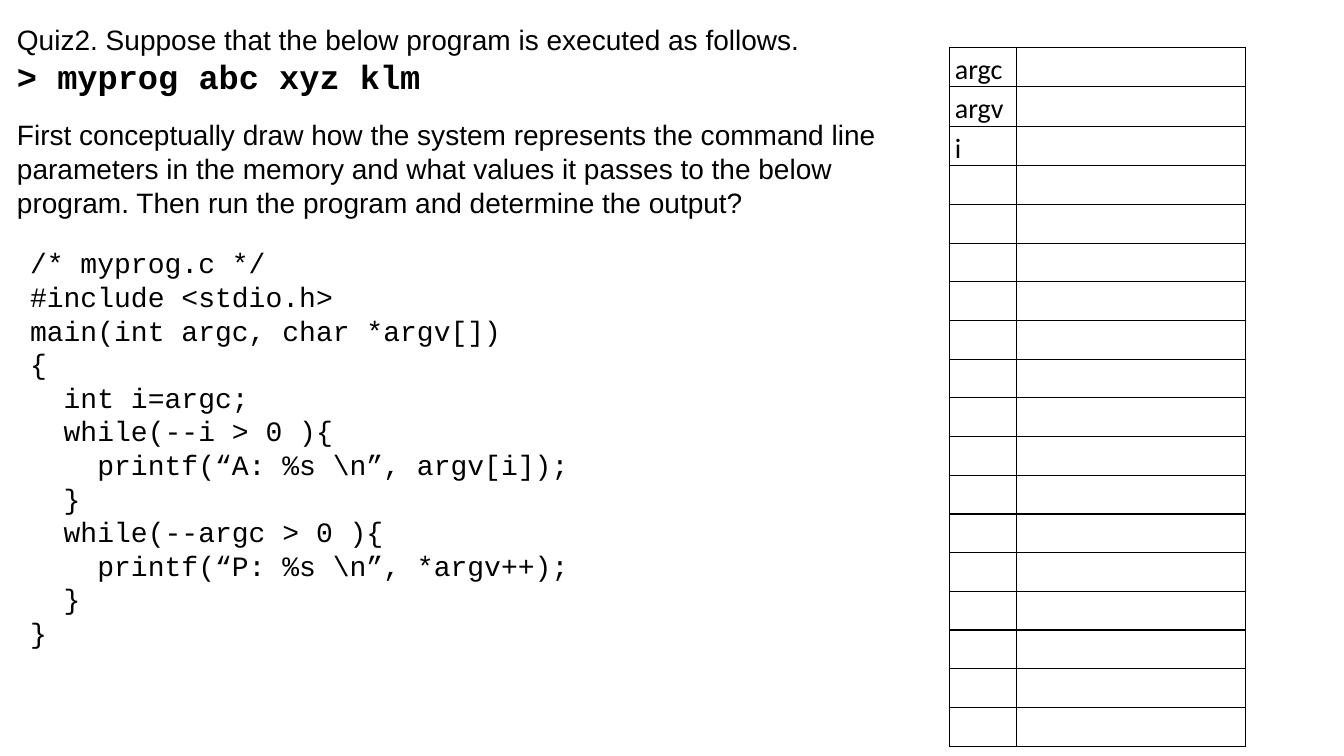
from pptx import Presentation
from pptx.dml.color import RGBColor
from pptx.enum import text
from pptx.oxml import parse_xml
from pptx.oxml.ns import nsdecls
from pptx.util import Inches, Pt

W, H = 13.33, 7.5
INK = "000000"
COMMAND = [
    ("Quiz2. Suppose that the below program is executed as follows.", dict(size=20, font="Arial")),
    ("> myprog abc xyz klm", dict(size=24, font="Courier New", bold=True)),
]
TASK = [(
    "First conceptually draw how the system represents the command line "
    "parameters in the memory and what values it passes to the below program. "
    "Then run the program and determine the output?",
    dict(size=20, font="Arial"),
)]
CODE = r"""/* myprog.c */
#include <stdio.h>
main(int argc, char *argv[])
{
  int i=argc;
  while(--i > 0 ){
    printf(“A: %s \n”, argv[i]);
  }
  while(--argc > 0 ){
    printf(“P: %s \n”, *argv++);
  }
}"""
PROGRAM = [(line, dict(size=20, font="Courier New")) for line in CODE.split("\n")]
BOXES = [
    (COMMAND, (0.07, 0.17, 8.84, 0.84)),
    (TASK, (0.07, 1.11, 8.84, 1.12)),
    (PROGRAM, (0.2, 2.37, 7.73, 4.14)),
]
VARIABLES = ["argc", "argv", "i"]
ROWS, COLS = 18, (0.66, 2.27)
TABLE_LEFT, TABLE_TOP, TABLE_HEIGHT = 9.42, 0.47, 6.91


def color(value):
    return RGBColor.from_string(value)


def write(p, content, size=20, font="Arial", bold=False):
    r = p.add_run()
    r.text = content
    r.font.size, r.font.name, r.font.bold = Pt(size), font, bold
    r.font.color.rgb = color(INK)


def add_text(slide, lines, area):
    tf = slide.shapes.add_textbox(*map(Inches, area)).text_frame
    tf.word_wrap = True
    tf.vertical_anchor = text.MSO_ANCHOR.MIDDLE
    for i, (line, style) in enumerate(lines):
        p = tf.add_paragraph() if i else tf.paragraphs[0]
        write(p, line, **style)


def format_cell(cell):
    cell.margin_left = cell.margin_right = Inches(0.05)
    cell.margin_top = cell.margin_bottom = 0
    cell.vertical_anchor = text.MSO_ANCHOR.BOTTOM
    props = cell._tc.get_or_add_tcPr()
    for side in ("lnL", "lnR", "lnT", "lnB"):
        props.append(parse_xml(
            f'<a:{side} {nsdecls("a")} w="12700"><a:solidFill>'
            f'<a:srgbClr val="{INK}"/></a:solidFill></a:{side}>'))
    cell.fill.background()


def add_memory(slide):
    area = (TABLE_LEFT, TABLE_TOP, sum(COLS), TABLE_HEIGHT)
    table = slide.shapes.add_table(ROWS, len(COLS), *map(Inches, area)).table
    table.first_row = table.horz_banding = False
    for column, width in zip(table.columns, COLS):
        column.width = Inches(width)
    for row in table.rows:
        row.height = Inches(TABLE_HEIGHT / ROWS)
    for cell in table.iter_cells():
        format_cell(cell)
    for i, name in enumerate(VARIABLES):
        p = table.cell(i, 0).text_frame.paragraphs[0]
        p.line_spacing, p.space_after = 1.15, Pt(10)
        write(p, name, font="Calibri")
    table.cell(1, 0).text_frame.paragraphs[0].alignment = text.PP_ALIGN.JUSTIFY


def main():
    prs = Presentation()
    prs.slide_width, prs.slide_height = Inches(W), Inches(H)
    slide = prs.slides.add_slide(prs.slide_layouts[6])
    add_memory(slide)
    for lines, area in BOXES:
        add_text(slide, lines, area)
    prs.save("out.pptx")


if __name__ == "__main__":
    main()
